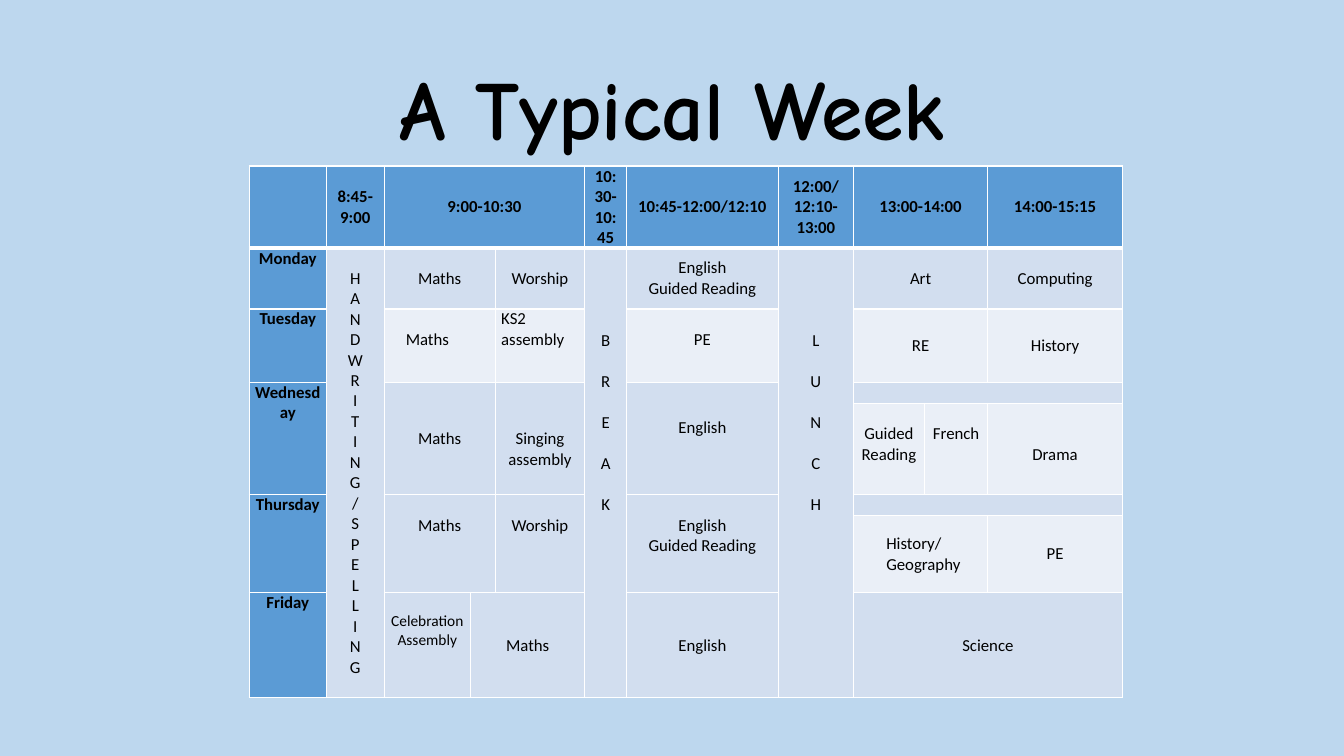
"""Build a one-slide weekly school timetable."""
from lxml.etree import SubElement
from pptx import Presentation
from pptx.dml.color import RGBColor
from pptx.enum.text import MSO_ANCHOR as ANCHOR, PP_ALIGN as ALIGN
from pptx.oxml.ns import qn
from pptx.util import Pt

BLUE, MID, PALE = "5B9BD5", "D2DEEF", "EAEFF7"
LINE = 14.65
COLS = [55.2, 41.2, 61.8, 17.6, 64, 29.8, 108.4, 53.7, 50.8, 45.2, 96.2]
ROWS = [58.6, 43.5, 52.5, 14.8, 65.5, 14.8, 55.2, 75]
PALE_ROWS = (2, 4, 6)
SPANS = [
    (0, 2, 1, 3), (0, 8, 1, 2),
    (1, 1, 7, 1), (1, 5, 7, 1), (1, 7, 7, 1),
    (1, 2, 1, 2), (1, 8, 1, 2), (2, 2, 1, 2), (2, 8, 1, 2),
    (3, 0, 2, 1), (3, 2, 2, 2), (3, 4, 2, 1), (3, 6, 2, 1), (3, 8, 1, 3),
    (5, 0, 2, 1), (5, 2, 2, 2), (5, 4, 2, 1), (5, 6, 2, 1), (5, 8, 1, 3),
    (6, 8, 1, 2), (7, 3, 1, 2), (7, 8, 1, 3),
]
HEADERS = {1: "8:45-9:00", 2: "9:00-10:30", 5: "10:30-10:45",
           6: "10:45-12:00/12:10", 7: "12:00/\n12:10-13:00",
           8: "13:00-14:00", 10: "14:00-15:15"}
DAYS = {1: "Monday", 2: "Tuesday", 3: "Wednesday", 5: "Thursday", 7: "Friday"}
LESSONS = [
    (1, 1, "\n".join("HANDWRITING/SPELLING"), {}),
    (1, 5, "\n".join("BREAK"), dict(top=4 * LINE, after=LINE)),
    (1, 7, "\n".join("LUNCH"), dict(top=4 * LINE, after=LINE)),
    (1, 2, "Maths", {}),
    (1, 4, "Worship", {}),
    (1, 6, "English\nGuided Reading", {}),
    (1, 8, "Art", {}),
    (1, 10, "Computing", {}),
    (2, 2, "Maths", dict(top=LINE, left=15.5, align=ALIGN.LEFT)),
    (2, 4, "KS2\nassembly", dict(top=0, align=ALIGN.LEFT)),
    (2, 6, "PE", dict(top=LINE)),
    (2, 8, "RE", {}),
    (2, 10, "History", {}),
    (3, 2, "Maths", {}),
    (3, 4, "Singing assembly", dict(top=33)),
    (3, 6, "English", dict(top=25)),
    (4, 8, "Guided\nReading", dict(top=LINE)),
    (4, 9, "French", dict(top=LINE)),
    (4, 10, "Drama", dict(top=2 * LINE)),
    (5, 2, "Maths", dict(top=LINE)),
    (5, 4, "Worship", dict(top=LINE)),
    (5, 6, "English\nGuided Reading", dict(top=LINE)),
    (6, 8, "History/\nGeography", dict(left=23.5, align=ALIGN.LEFT)),
    (6, 10, "PE", {}),
    (7, 2, "Celebration\nAssembly", dict(top=13.4, size=11)),
    (7, 3, "Maths", {}),
    (7, 6, "English", {}),
    (7, 8, "Science", {}),
]


def rgb(value):
    return RGBColor.from_string(value)


def write(tf, text, size=12, font="Calibri", color="000000", bold=False,
          align=ALIGN.CENTER, after=0, spacing=1.0):
    for i, line in enumerate(text.split("\n")):
        p = tf.add_paragraph() if i else tf.paragraphs[0]
        p.alignment, p.space_after, p.line_spacing = align, Pt(after), spacing
        r = p.add_run()
        r.text = line
        r.font.size, r.font.name, r.font.bold = Pt(size), font, bold
        r.font.color.rgb = rgb(color)


class Deck:
    def __init__(self):
        self.prs = Presentation()
        self.prs.slide_width, self.prs.slide_height = Pt(960), Pt(540)
        self.s = self.prs.slides.add_slide(self.prs.slide_layouts[6])

    def background(self, color):
        fill = self.s.background.fill
        fill.solid()
        fill.fore_color.rgb = rgb(color)

    def text(self, x, y, w, h, text, **fmt):
        tf = self.s.shapes.add_textbox(Pt(x), Pt(y), Pt(w), Pt(h)).text_frame
        tf.word_wrap = True
        tf.vertical_anchor = ANCHOR.MIDDLE
        write(tf, text, **fmt)

    def table(self, x, y, cols, rows):
        frame = self.s.shapes.add_table(len(rows), len(cols), Pt(x), Pt(y),
                                        Pt(sum(cols)), Pt(sum(rows)))
        tbl = frame.table
        for col, w in zip(tbl.columns, cols):
            col.width = Pt(w)
        for row, h in zip(tbl.rows, rows):
            row.height = Pt(h)
        for r in range(len(rows)):
            for c in range(len(cols)):
                head = r == 0 or c == 0
                color = BLUE if head else PALE if r in PALE_ROWS else MID
                self.style_cell(tbl.cell(r, c), color,
                                L=1, R=1, T=3 if r == 1 else 1, B=3 if r == 0 else 1)
        return tbl

    def style_cell(self, cell, color, **borders):
        cell.margin_left = cell.margin_right = Pt(4.3)
        cell.margin_top = cell.margin_bottom = 0
        tc_pr = cell._tc.get_or_add_tcPr()
        for side, width in borders.items():
            ln = SubElement(tc_pr, qn(f"a:ln{side}"), w=str(Pt(width)))
            SubElement(SubElement(ln, qn("a:solidFill")), qn("a:srgbClr"), val="FFFFFF")
        cell.fill.solid()
        cell.fill.fore_color.rgb = rgb(color)
        SubElement(cell.text_frame.paragraphs[0]._p, qn("a:endParaRPr"), sz="1200")

    def cell(self, cell, text, top=None, left=4.3, **fmt):
        cell.vertical_anchor = ANCHOR.MIDDLE if top is None else ANCHOR.TOP
        cell.margin_top, cell.margin_left = Pt(top or 0), Pt(left)
        write(cell.text_frame, text, **fmt)


def main():
    deck = Deck()
    deck.background("BDD7EE")
    deck.text(66, 29, 828, 104, "A Typical Week", size=60, font="Comic Neue",
              bold=True, spacing=0.9)
    tbl = deck.table(178, 118.6, COLS, ROWS)
    for r, c, h, w in SPANS:
        tbl.cell(r, c).merge(tbl.cell(r + h - 1, c + w - 1))
    for c, hours in HEADERS.items():
        deck.cell(tbl.cell(0, c), hours, bold=True)
    for r, day in DAYS.items():
        deck.cell(tbl.cell(r, 0), day, top=0, bold=True)
    for r, c, lesson, fmt in LESSONS:
        deck.cell(tbl.cell(r, c), lesson, **fmt)
    deck.prs.save("out.pptx")


if __name__ == "__main__":
    main()
